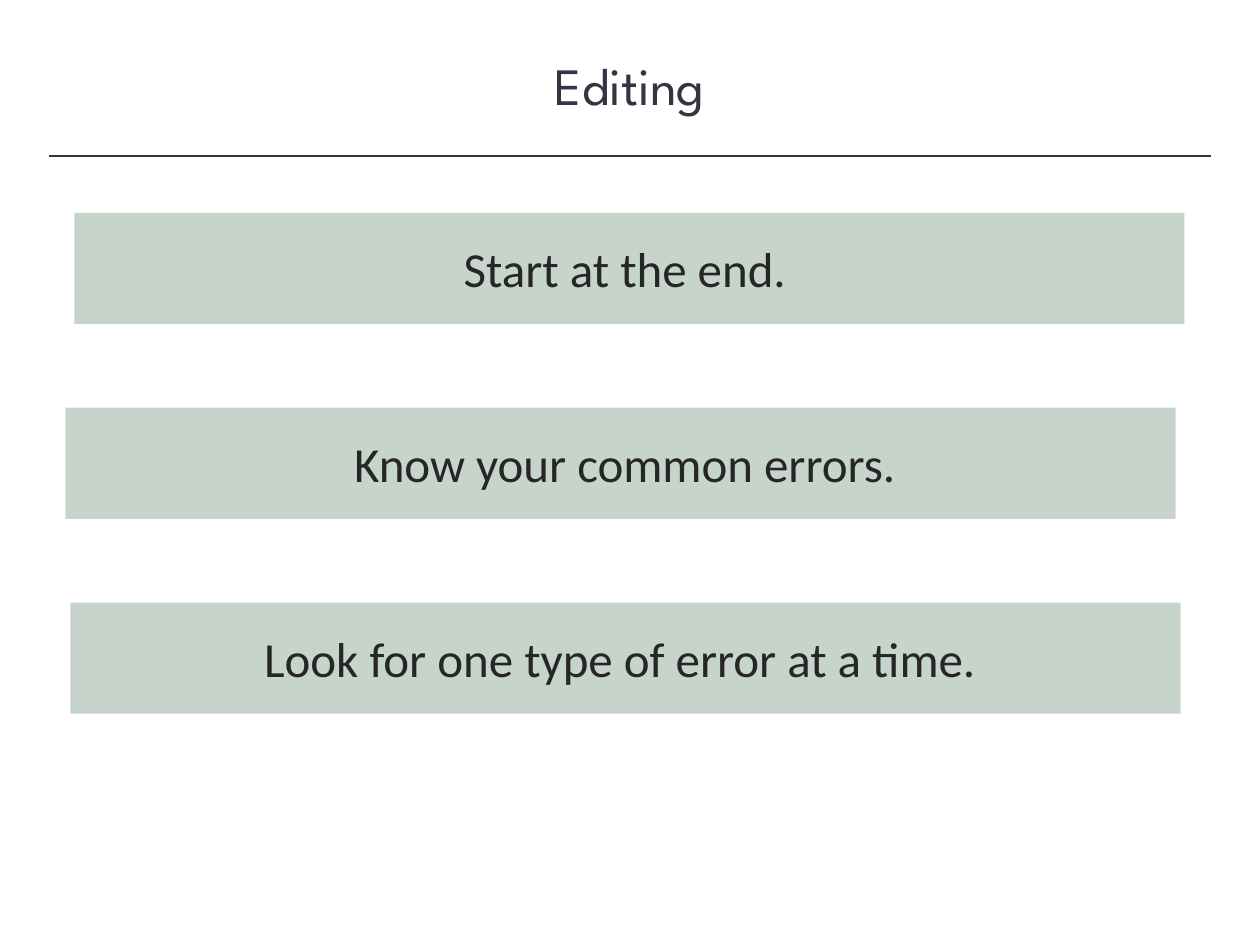
from dataclasses import dataclass

from lxml import etree
from pptx import Presentation
from pptx.dml.color import RGBColor
from pptx.enum.shapes import MSO_CONNECTOR, MSO_SHAPE
from pptx.enum.text import MSO_ANCHOR, MSO_AUTO_SIZE, PP_ALIGN
from pptx.oxml.ns import qn
from pptx.util import Cm, Pt

RECT = MSO_SHAPE.RECTANGLE
STRAIGHT = MSO_CONNECTOR.STRAIGHT
CENTER = PP_ALIGN.CENTER
MIDDLE = MSO_ANCHOR.MIDDLE
TOP = MSO_ANCHOR.TOP
GROW = MSO_AUTO_SIZE.SHAPE_TO_FIT_TEXT


@dataclass(frozen=True)
class Theme:
    ink: RGBColor = RGBColor(0x32, 0x35, 0x42)
    body: RGBColor = RGBColor(0x26, 0x26, 0x26)
    bar: RGBColor = RGBColor(0xC7, 0xD4, 0xCB)
    title_font: str = "League Spartan"
    body_font: str = "Calibri"
    title_size: int = 30
    body_size: int = 28
    rule_width: int = 1


THEME = Theme()
SLIDE_W, SLIDE_H = 25.4, 19.05
BAR_W, BAR_H = 22.38, 2.24
LABEL_W, LABEL_H = 21.69, 1.45
FIRST_TOP, PITCH = 4.29, 3.93
TIPS = [
    ("Start at the end.", 1.5, 0.25),
    ("Know your common errors.", 1.32, 0.43),
    ("Look for one type of error at a time.", 1.42, 0.23),
]


def write(sp, text, font, size, color, anchor):
    tf = sp.text_frame
    tf.word_wrap = True
    tf.auto_size = GROW
    tf.vertical_anchor = anchor
    p = tf.paragraphs[0]
    p.alignment = CENTER
    r = p.add_run()
    r.text = text
    r.font.name = font
    r.font.size = Pt(size)
    r.font.color.rgb = color


def add_rect(shapes, x, y, w, h):
    sp = shapes.add_shape(RECT, Cm(x), Cm(y), Cm(w), Cm(h))
    sp.shadow.inherit = False
    sp.fill.solid()
    sp.fill.fore_color.rgb = THEME.bar
    sp.line.fill.background()
    return sp


def add_title(s, text, x, y, w, h):
    sp = s.shapes.add_textbox(Cm(x), Cm(y), Cm(w), Cm(h))
    write(sp, text, THEME.title_font, THEME.title_size, THEME.ink, TOP)


def add_rule(s, x, y, w):
    line = s.shapes.add_connector(STRAIGHT, Cm(x), Cm(y), Cm(x + w), Cm(y))
    line.line.color.rgb = THEME.ink
    line.line.width = Pt(THEME.rule_width)
    etree.SubElement(line._element.spPr, qn("a:effectLst"))


def add_tip(s, text, x, y, w, h, inset):
    shapes = s.shapes.add_group_shape().shapes
    add_rect(shapes, x, y, w, h)
    label = add_rect(shapes, x + inset, y + (h - LABEL_H) / 2, LABEL_W, LABEL_H)
    write(label, text, THEME.body_font, THEME.body_size, THEME.body, MIDDLE)


def main():
    prs = Presentation()
    prs.slide_width, prs.slide_height = Cm(SLIDE_W), Cm(SLIDE_H)
    s = prs.slides.add_slide(prs.slide_layouts[6])
    add_title(s, "Editing", 0, 0.94, SLIDE_W, 1.55)
    add_rule(s, 0.99, 3.15, SLIDE_W - 2 * 0.99)
    for i, (text, x, inset) in enumerate(TIPS):
        add_tip(s, text, x, FIRST_TOP + i * PITCH, BAR_W, BAR_H, inset)
    prs.save("out.pptx")


if __name__ == "__main__":
    main()
